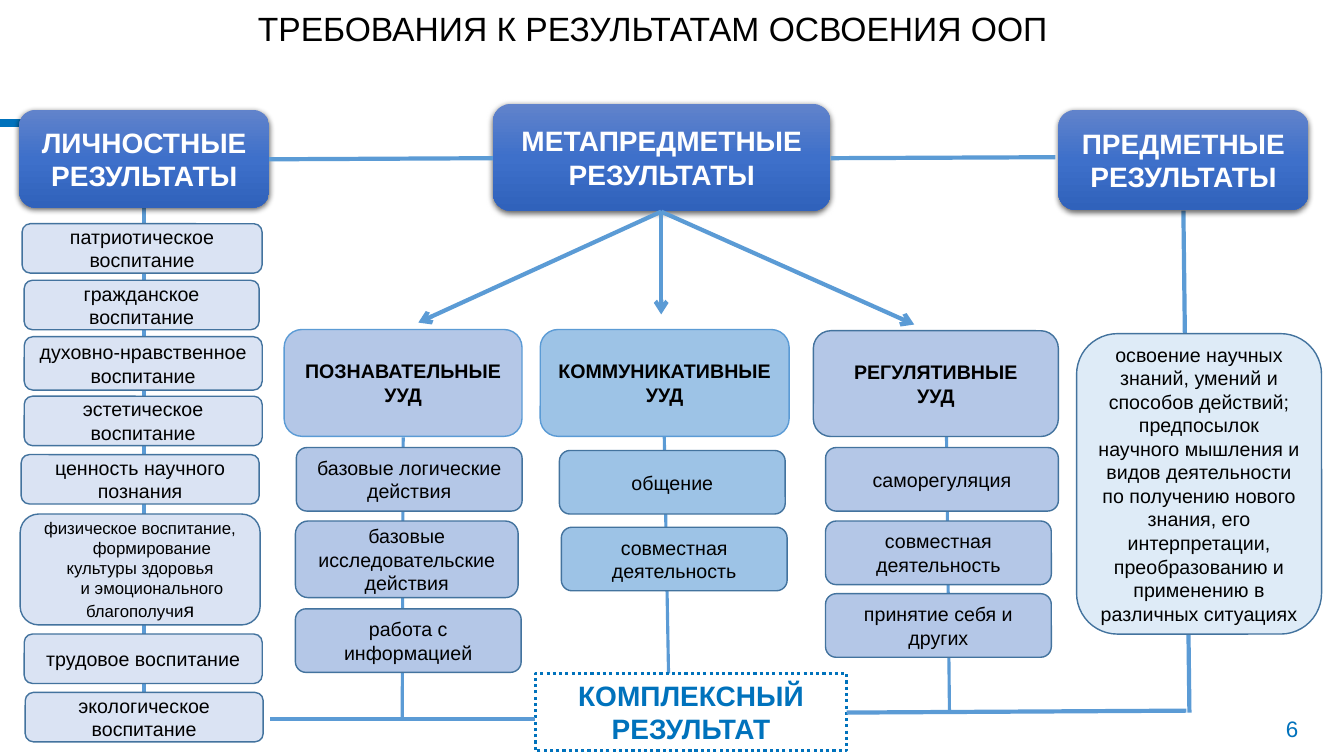
from copy import deepcopy
from lxml import etree
from pptx import Presentation
from pptx.dml.color import RGBColor
from pptx.enum import dml, shapes, text
from pptx.oxml.ns import qn
from pptx.util import Pt

COLORS = {
    "black": "000000", "white": "FFFFFF", "accent": "0072BC", "link": "5B9BD5",
    "border": "43739E", "pale": "DAE3F3", "lavender": "B4C7E7", "sky": "9DC3E6",
    "ice": "DEEBF7", "top": "6183CB", "middle": "3E70CA", "bottom": "3062BB",
}
HEADER_STOPS = [("top", 0), ("middle", 0.5), ("bottom", 1)]

TITLE = "ТРЕБОВАНИЯ К РЕЗУЛЬТАТАМ ОСВОЕНИЯ ООП"
PAGE_NUMBER = "6"
HEADERS = [
    ("ЛИЧНОСТНЫЕ РЕЗУЛЬТАТЫ", 13.7, 78.5, 178.6, 69.8),
    ("ПРЕДМЕТНЫЕ\nРЕЗУЛЬТАТЫ", 756, 78.5, 178.6, 71.3),
    ("МЕТАПРЕДМЕТНЫЕ\nРЕЗУЛЬТАТЫ", 352.1, 74.2, 241.2, 76.3),
]
PERSONAL = [
    ("патриотическое воспитание", 15.8, 159.8, 171.4, 35.3),
    ("гражданское воспитание", 17.3, 200.2, 167.8, 35.3),
    ("духовно-нравственное воспитание", 17.3, 240.5, 170, 38.2),
    ("эстетическое воспитание", 17.3, 283, 170, 35.3),
    ("ценность научного познания", 15.1, 324.7, 170, 35.3),
    ("трудовое воспитание", 17.3, 452.9, 170, 35.3),
    ("экологическое воспитание", 18, 494.6, 170, 35.3),
]
HEALTH = ("физическое воспитание,\nформирование культуры здоровья\n"
          "и эмоционального благополучи", 14.4, 367.2, 171.4, 79.2)
HEALTH_ENDING = "я"
SKILLS = [
    ("ПОЗНАВАТЕЛЬНЫЕ\nУУД", 203, 235.4, 169.9, 76.3, "lavender", "link"),
    ("КОММУНИКАТИВНЫЕ\nУУД", 385.9, 235.4, 177.8, 76.3, "sky", "link"),
    ("РЕГУЛЯТИВНЫЕ\nУУД", 581, 236.2, 175, 75.6, "lavender", "border"),
]
ACTIONS = [
    ("базовые логические действия", 211.7, 319.7, 161.3, 45.4, "lavender"),
    ("базовые исследовательские действия", 211, 372.2, 159.1, 54.7, "lavender"),
    ("работа с информацией", 211, 434.9, 161.3, 45.4, "lavender"),
    ("общение", 399.6, 321.8, 161.3, 45.4, "sky"),
    ("совместная деятельность", 401, 376.6, 161.3, 45.4, "sky"),
    ("саморегуляция", 589.7, 319.7, 166.3, 45.4, "lavender"),
    ("совместная деятельность", 589.7, 372.2, 161.3, 45.4, "lavender"),
    ("принятие себя и других", 589.7, 424.1, 161.3, 45.4, "lavender"),
    ("освоение научных знаний, умений и способов действий; предпосылок "
     "научного мышления и видов деятельности по получению нового знания, "
     "его интерпретации, преобразованию и применению в различных ситуациях",
     769, 238.3, 175, 214.6, "ice"),
]
OUTCOME = ("КОМПЛЕКСНЫЙ РЕЗУЛЬТАТ", 382.3, 481, 222.5, 55.4)

STEMS = [
    (676.1, 311.8, 678.2, 507.6, 2.25),
    (474.5, 311.8, 478.1, 512.6, 2.25),
    (288, 312.5, 287.3, 513.4, 2.25),
    (103, 148.3, 103, 494.6, 3),
    (845.3, 150.5, 849.6, 509, 3),
]
LINKS = [
    (593.3, 113, 753.8, 112.3),
    (192.2, 113.8, 352.1, 113),
    (847.4, 507.6, 604.8, 509),
    (193, 513.4, 382.3, 513.4),
]
ARROW_START = (472.3, 151.2)
ARROW_ENDS = [(472.3, 224.6), (298.8, 230.4), (653, 231.8)]

presentation = Presentation()
presentation.slide_width, presentation.slide_height = Pt(960), Pt(540)
slide = presentation.slides.add_slide(presentation.slide_layouts[5])


def rgb(name):
    return RGBColor.from_string(COLORS[name])


def format_font(font, size, color, bold=False):
    values = {"name": "Arial", "size": Pt(size), "bold": bold}
    for name, value in values.items():
        setattr(font, name, value)
    font.color.rgb = rgb(color)


def write(shape, content, size=14, color="black", bold=False,
          anchor=text.MSO_ANCHOR.MIDDLE, align=text.PP_ALIGN.CENTER):
    frame = shape.text_frame
    frame.text = content
    values = {"word_wrap": True, "auto_size": text.MSO_AUTO_SIZE.NONE,
              "vertical_anchor": anchor,
              "margin_left": Pt(7.2), "margin_right": Pt(7.2),
              "margin_top": Pt(3.6), "margin_bottom": Pt(3.6)}
    for name, value in values.items():
        setattr(frame, name, value)
    for paragraph in frame.paragraphs:
        paragraph.alignment = align
        for run in paragraph.runs:
            format_font(run.font, size, color, bold)


def add_box(content, left, top, width, height, fill="pale", border="border",
            weight=1, kind=shapes.MSO_SHAPE.ROUNDED_RECTANGLE, **style):
    shape = slide.shapes.add_shape(kind, Pt(left), Pt(top), Pt(width), Pt(height))
    shape.shadow.inherit = False
    shape.fill.solid()
    shape.fill.fore_color.rgb = rgb(fill)
    shape.line.color.rgb = rgb(border)
    shape.line.width = Pt(weight)
    write(shape, content, **style)
    return shape


def style_header(shape):
    shape.line.fill.background()
    shape.fill.gradient()
    shape.fill.gradient_angle = 270
    properties = shape._element.spPr
    stops = properties.find(".//" + qn("a:gsLst"))
    stops.append(deepcopy(stops[0]))
    for stop, (color, position) in zip(shape.fill.gradient_stops, HEADER_STOPS):
        stop.color.rgb = rgb(color)
        stop.position = position
    shadow = etree.SubElement(
        properties.find(qn("a:effectLst")), qn("a:outerShdw"),
        blurRad=str(Pt(4.5)), dist=str(Pt(1.5)), dir="5400000", algn="ctr", rotWithShape="0")
    color = etree.SubElement(shadow, qn("a:srgbClr"), val=COLORS["black"])
    etree.SubElement(color, qn("a:alpha"), val="63000")


def add_line(x1, y1, x2, y2, weight=3, color="link", arrow=False):
    connector = slide.shapes.add_connector(
        shapes.MSO_CONNECTOR.STRAIGHT, Pt(x1), Pt(y1), Pt(x2), Pt(y2))
    connector.line.color.rgb = rgb(color)
    connector.line.width = Pt(weight)
    properties = connector._element.spPr
    if arrow:
        etree.SubElement(properties.find(qn("a:ln")), qn("a:tailEnd"), type="arrow")
    etree.SubElement(properties, qn("a:effectLst"))


title = slide.shapes.title
for name, value in {"left": 177, "top": 2, "width": 594, "height": 36}.items():
    setattr(title, name, Pt(value))
write(title, TITLE, size=24, anchor=text.MSO_ANCHOR.TOP, align=text.PP_ALIGN.LEFT)

number = slide.shapes.add_textbox(Pt(894.2), Pt(505.4), Pt(57.6), Pt(29.5))
write(number, PAGE_NUMBER, size=16, color="accent")

add_line(0, 87.8, 146.2, 87.8, weight=6, color="accent")
for stem in STEMS:
    add_line(*stem)
for header in HEADERS:
    style_header(add_box(*header, size=20, color="white", bold=True))
for skill in SKILLS:
    add_box(*skill, bold=True)
for item in PERSONAL + ACTIONS:
    add_box(*item)

health_paragraphs = add_box(*HEALTH, size=12).text_frame.paragraphs
for paragraph in health_paragraphs[1:]:
    paragraph._p.get_or_add_pPr().set("indent", str(Pt(17)))
ending = health_paragraphs[-1].add_run()
ending.text = HEALTH_ENDING
format_font(ending.font, 14, "black")

outcome = add_box(*OUTCOME, fill="white", border="accent", weight=2.25,
                  kind=shapes.MSO_SHAPE.RECTANGLE, size=20, color="accent",
                  bold=True, anchor=text.MSO_ANCHOR.TOP)
outcome.line.dash_style = dml.MSO_LINE.ROUND_DOT

for link in LINKS:
    add_line(*link)
for end in ARROW_ENDS:
    add_line(*ARROW_START, *end, arrow=True)

presentation.save("out.pptx")
